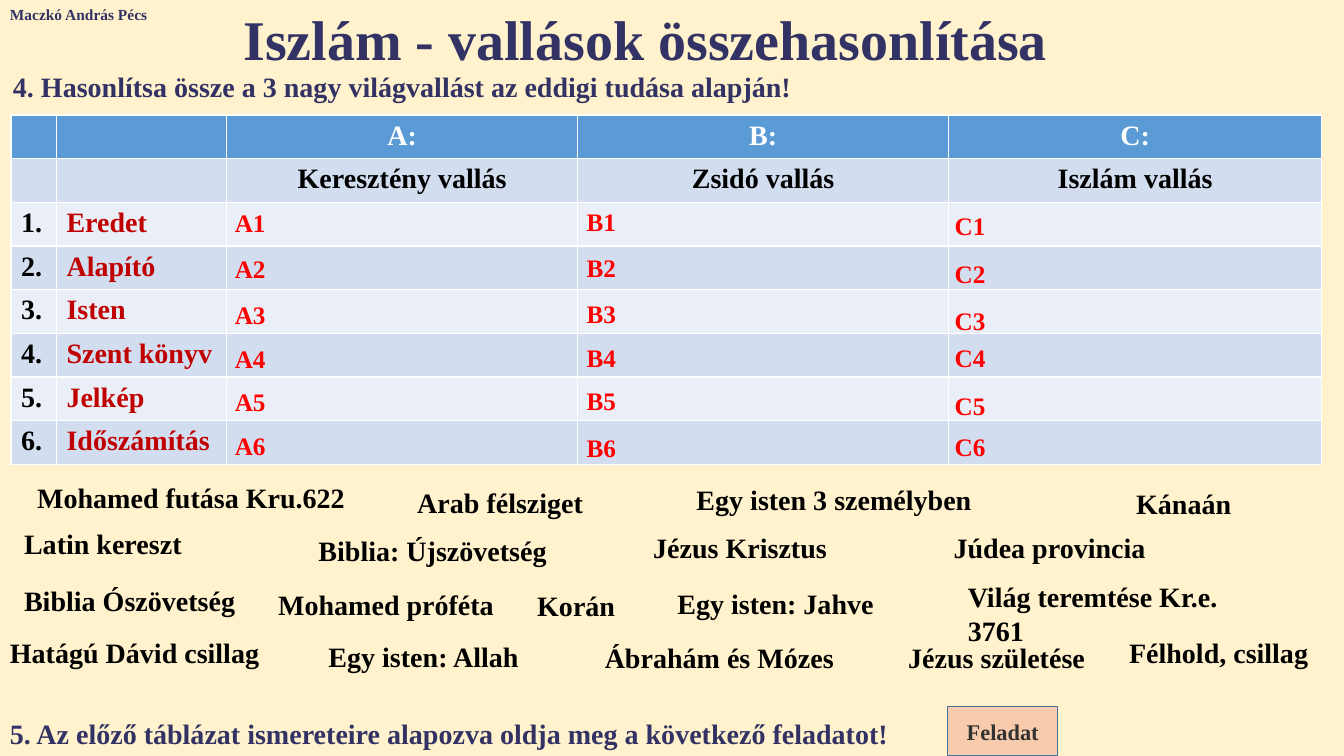
from pptx import Presentation, util as u
from pptx.dml import color
from pptx.enum import shapes, text

deck = Presentation()
deck.slide_width, deck.slide_height = u.Inches(13.33), u.Inches(7.5)
column, row = deck.slide_width // 1333, deck.slide_height // 750
slide = deck.slides.add_slide(deck.slide_layouts[6])


def paint(target, shade):
    if hasattr(target, "solid"):
        target.solid()
        target = target.fore_color
    target.rgb = color.RGBColor.from_string(shade)


def write(frame, words, size, shade, align=text.PP_ALIGN.LEFT):
    paragraph = frame.paragraphs[0]
    paragraph.alignment = align
    run = paragraph.add_run()
    run.text = words
    for key, value in {"name": "Times New Roman", "size": u.Pt(size), "bold": True}.items():
        setattr(run.font, key, value)
    paint(run.font.color, shade)


paint(slide.background.fill, "FFF2CC")
CENTER = text.PP_ALIGN.CENTER
NAVY, BLACK, RED = "323264", "000000", "FF0000"

religions = slide.shapes.add_table(8, 5, 11 * column, 114 * row, 1300 * column, 347 * row).table
for religion_column, width in zip(religions.columns, [45, 169, 348, 368, 370]):
    religion_column.width = width * column
for religion_row in religions.rows:
    religion_row.height = 347 * row // 8

aspects = ["Eredet", "Alapító", "Isten", "Szent könyv", "Jelkép", "Időszámítás"]
entries = [["", "", "A:", "B:", "C:"],
           ["", "", "Keresztény vallás", "Zsidó vallás", "Iszlám vallás"]]
entries += [[f"{number}.", aspect, "", "", ""] for number, aspect in enumerate(aspects, 1)]
for r, line in enumerate(entries):
    for c, words in enumerate(line):
        cell = religions.cell(r, c)
        paint(cell.fill, "5B9BD5" if r == 0 else ["EAEFF7", "D2DEEF"][r % 2])
        if words:
            shade = "FFFFFF" if r == 0 else "C00000" if r > 1 and c == 1 else BLACK
            write(cell.text_frame, words, 20, shade, CENTER if r < 2 else text.PP_ALIGN.LEFT)

texts = [
    ("Iszlám - vallások összehasonlítása", 189, 0, 902, 77, 40, NAVY, CENTER, True),
    ("Maczkó András Pécs", 0, 0, 159, 29, 11, NAVY, text.PP_ALIGN.LEFT, True),
    ("4. Hasonlítsa össze a 3 nagy világvallást az eddigi tudása alapján!",
     3, 64, 888, 44, 20, NAVY, text.PP_ALIGN.LEFT, True),
    ("5. Az előző táblázat ismereteire alapozva oldja meg a következő feladatot!",
     0, 706, 905, 44, 20, NAVY, text.PP_ALIGN.LEFT, False),
]

answers = {
    "A": (223, [201, 246, 292, 336, 378, 422]),
    "B": (572, [200, 245, 291, 335, 377, 424]),
    "C": (937, [204, 251, 298, 335, 382, 423]),
}
for letter, (left, tops) in answers.items():
    for number, top in enumerate(tops, 1):
        texts.append((f"{letter}{number}", left, top, 51, 40, 18, RED, text.PP_ALIGN.LEFT, False))

clues = [
    ("Mohamed futása Kru.622", 27, 472, 330),
    ("Arab félsziget", 404, 477, 193),
    ("Egy isten 3 személyben", 681, 474, 307),
    ("Kánaán", 1117, 478, 116),
    ("Latin kereszt", 14, 517, 188),
    ("Biblia: Újszövetség", 306, 524, 248),
    ("Jézus Krisztus", 638, 521, 199),
    ("Júdea provincia", 936, 521, 217),
    ("Biblia Ószövetség", 14, 574, 238),
    ("Mohamed próféta", 266, 578, 241),
    ("Korán", 523, 579, 137),
    ("Egy isten: Jahve", 662, 577, 223),
    ("Világ teremtése Kr.e. 3761", 950, 570, 328),
    ("Hatágú Dávid csillag", 0, 626, 270),
    ("Egy isten: Allah", 316, 630, 223),
    ("Ábrahám és Mózes", 590, 631, 256),
    ("Jézus születése", 891, 631, 197),
    ("Félhold, csillag", 1110, 626, 223),
]
for words, left, top, width in clues:
    texts.append((words, left, top, width, 44, 20, BLACK, text.PP_ALIGN.LEFT, True))

for words, left, top, width, height, size, shade, align, wrap in texts:
    frame = slide.shapes.add_textbox(left * column, top * row, width * column, height * row).text_frame
    for key, value in {"word_wrap": wrap, "auto_size": text.MSO_AUTO_SIZE.SHAPE_TO_FIT_TEXT}.items():
        setattr(frame, key, value)
    write(frame, words, size, shade, align)

task = slide.shapes.add_shape(shapes.MSO_SHAPE.RECTANGLE, 940 * column, 701 * row, 109 * column, 49 * row)
task.shadow.inherit = False
paint(task.fill, "F8CBAD")
paint(task.line.fill, "43739E")
task.line.width = u.Pt(1)
task.text_frame.vertical_anchor = text.MSO_ANCHOR.MIDDLE
write(task.text_frame, "Feladat", 16, "323232", CENTER)

deck.save("out.pptx")
